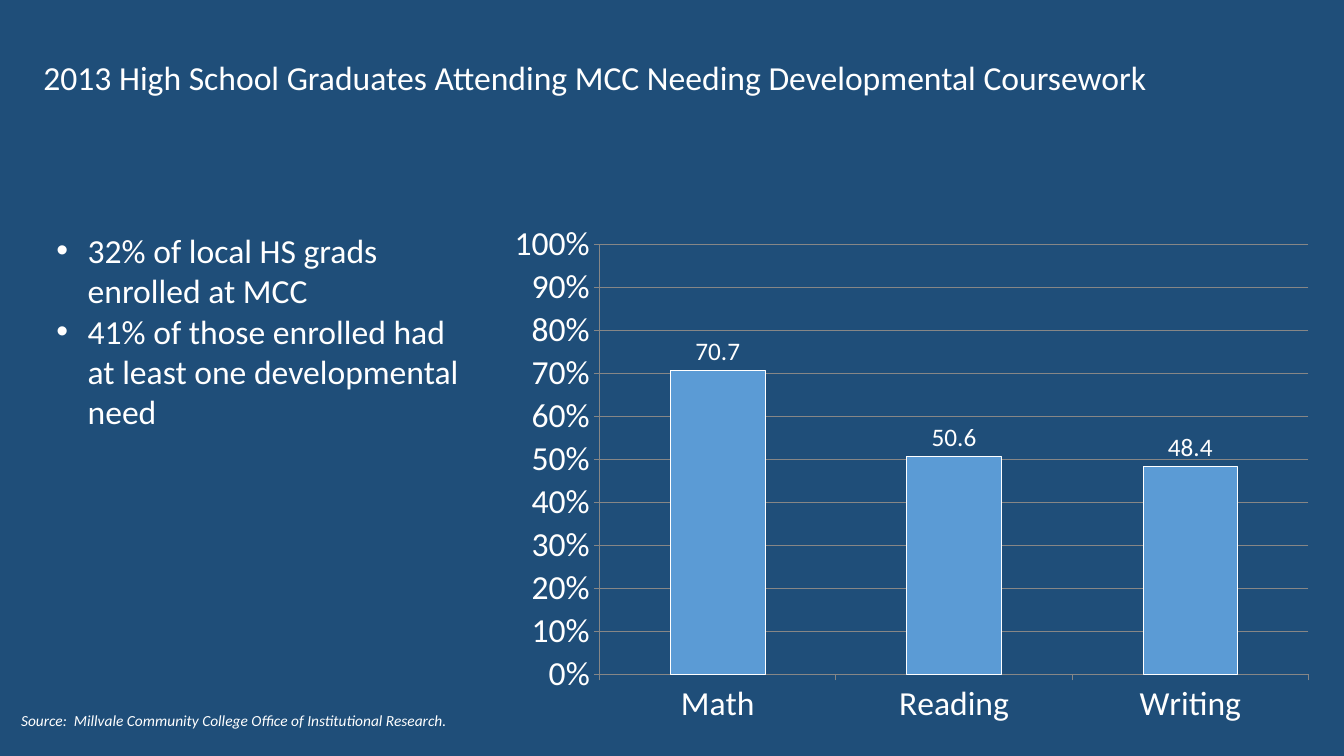
import pptx
import pptx.chart.data
import pptx.dml.color
import pptx.enum.chart
import pptx.enum.text
import pptx.util
from lxml import etree

NAVY = pptx.dml.color.RGBColor(0x1F, 0x4E, 0x79)
BLUE = pptx.dml.color.RGBColor(0x5B, 0x9B, 0xD5)
GRAY = pptx.dml.color.RGBColor(0x86, 0x86, 0x86)
WHITE = pptx.dml.color.RGBColor(0xFF, 0xFF, 0xFF)

WIDTH, HEIGHT = pptx.util.Inches(13.33), pptx.util.Inches(7.5)
# Left, top, width and height as percentages of the slide
TITLE_AREA = (2.48, 3.33, 95.87, 14.4)
BULLET_AREA = (3.45, 29.73, 31.73, 28.27)
SOURCE_AREA = (0.83, 93.47, 34.36, 3.87)
CHART_AREA = (37.06, 28.27, 61.52, 69.07)

HEADING = "2013 High School Graduates Attending MCC Needing Developmental Coursework"
BULLETS = [
    "32% of local HS grads enrolled at MCC",
    "41% of those enrolled had at least one developmental need",
]
SOURCE = "Source:  Millvale Community College Office of Institutional Research."
NEEDS = {"Math": 70.7, "Reading": 50.6, "Writing": 48.4}


def place(area):
    """Turn percentages of the slide into left, top, width and height."""
    return [int(share * side / 100) for share, side in zip(area, (WIDTH, HEIGHT) * 2)]


def move(shape, area):
    shape.left, shape.top, shape.width, shape.height = place(area)


def set_attributes(target, values):
    for name, value in values.items():
        setattr(target, name, value)


def format_font(font, size, **values):
    set_attributes(font, {"name": "Calibri", "size": pptx.util.Pt(size), **values})
    font.color.rgb = WHITE


def write(shape, lines, size, anchor, line_spacing=1.0, **font_values):
    frame = shape.text_frame
    frame.text = "\n".join(lines)
    set_attributes(frame, {
        "word_wrap": True,
        "auto_size": pptx.enum.text.MSO_AUTO_SIZE.NONE,
        "vertical_anchor": anchor,
    })
    for paragraph in frame.paragraphs:
        set_attributes(paragraph, {
            "alignment": pptx.enum.text.PP_ALIGN.LEFT,
            "line_spacing": line_spacing,
            "space_before": pptx.util.Pt(0),
        })
        for run in paragraph.runs:
            format_font(run.font, size, **font_values)


def add_bullets(shape, indent):
    for paragraph in shape.text_frame.paragraphs:
        properties = paragraph._p.get_or_add_pPr()
        properties.set("marL", str(indent))
        properties.set("indent", str(-indent))
        for tag, name, value in (("a:buFont", "typeface", "Arial"), ("a:buChar", "char", "•")):
            etree.SubElement(properties, pptx.oxml.ns.qn(tag)).set(name, value)


def format_axis(axis):
    axis.major_tick_mark = pptx.enum.chart.XL_TICK_MARK.OUTSIDE
    axis.minor_tick_mark = pptx.enum.chart.XL_TICK_MARK.NONE
    format_font(axis.tick_labels.font, 24)
    format_line(axis.format.line, GRAY)


def format_line(line, color):
    line.color.rgb = color
    line.width = pptx.util.Pt(0.75)


def add_needs_chart(slide):
    data = pptx.chart.data.CategoryChartData()
    data.categories = list(NEEDS)
    data.add_series("Series 1", list(NEEDS.values()))
    kind = pptx.enum.chart.XL_CHART_TYPE.COLUMN_CLUSTERED
    chart = slide.shapes.add_chart(kind, *place(CHART_AREA), data).chart
    set_attributes(chart, {"has_legend": False, "has_title": False})
    format_font(chart.font, 18)

    for axis in (chart.category_axis, chart.value_axis):
        format_axis(axis)
    set_attributes(chart.value_axis, {
        "minimum_scale": 0,
        "maximum_scale": 100,
        "major_unit": 10,
        "has_major_gridlines": True,
    })
    format_line(chart.value_axis.major_gridlines.format.line, GRAY)
    set_attributes(chart.value_axis.tick_labels, {
        "number_format": "0\\%", "number_format_is_linked": False,
    })

    plot = chart.plots[0]
    set_attributes(plot, {"gap_width": 150, "vary_by_categories": False})
    series = plot.series[0]
    series.format.fill.solid()
    series.format.fill.fore_color.rgb = BLUE
    format_line(series.format.line, WHITE)
    labels = series.data_labels
    set_attributes(labels, {
        "show_value": True,
        "number_format": "#,##0.0",
        "number_format_is_linked": False,
        "position": pptx.enum.chart.XL_LABEL_POSITION.OUTSIDE_END,
    })
    format_font(labels.font, 18)


def main():
    presentation = pptx.Presentation()
    set_attributes(presentation, {"slide_width": WIDTH, "slide_height": HEIGHT})
    slide = presentation.slides.add_slide(presentation.slide_layouts[1])
    slide.background.fill.solid()
    slide.background.fill.fore_color.rgb = NAVY

    top = pptx.enum.text.MSO_ANCHOR.TOP
    middle = pptx.enum.text.MSO_ANCHOR.MIDDLE
    title, body = slide.shapes.title, slide.placeholders[1]
    move(title, TITLE_AREA)
    write(title, [HEADING], 24, middle, line_spacing=0.9)
    move(body, BULLET_AREA)
    write(body, BULLETS, 24, top)
    add_bullets(body, pptx.util.Inches(0.31))
    source = slide.shapes.add_textbox(*place(SOURCE_AREA))
    write(source, [SOURCE], 11, top, italic=True)
    add_needs_chart(slide)
    presentation.save("out.pptx")


if __name__ == "__main__":
    main()
